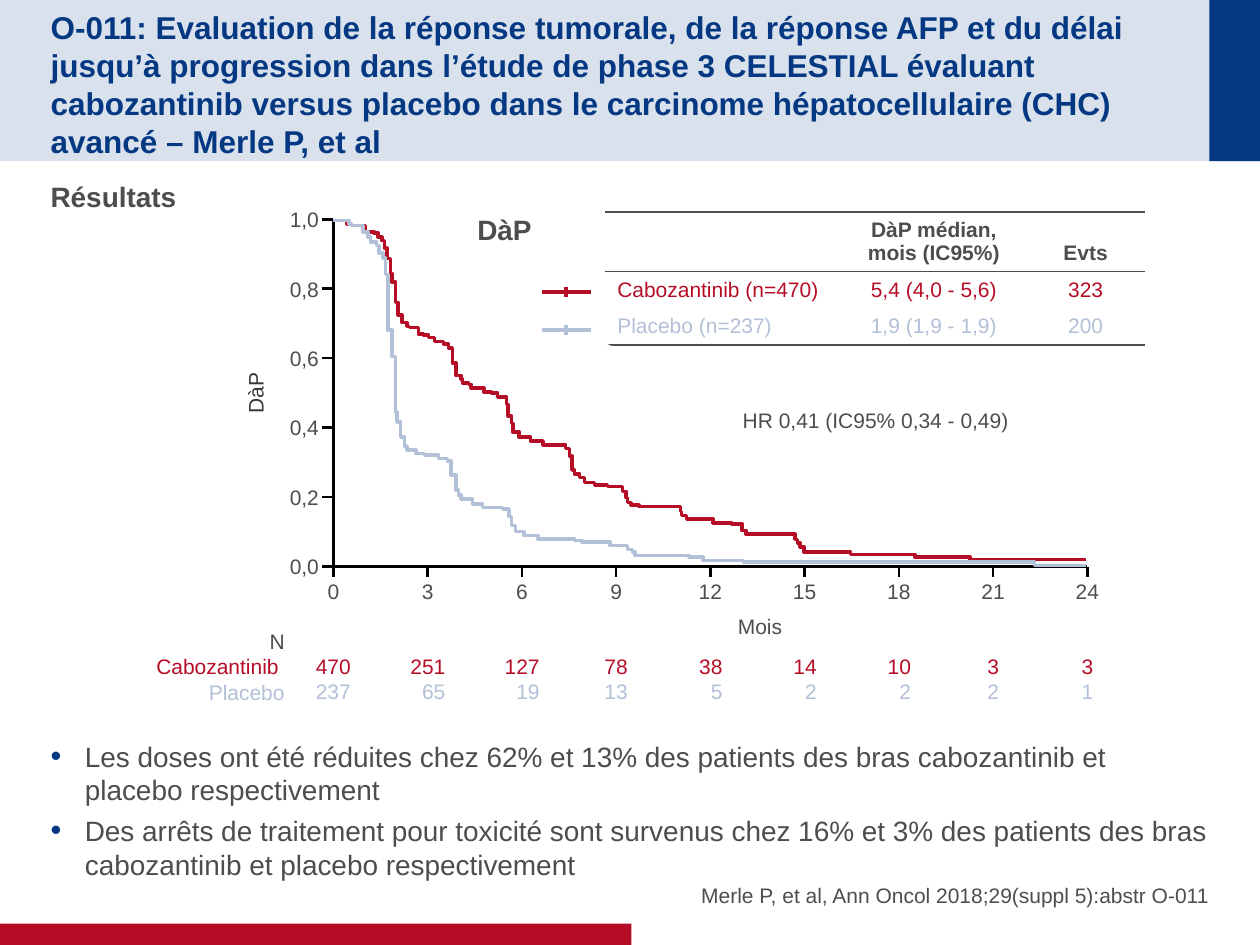
from lxml import etree
from pptx import Presentation
from pptx import util as u
from pptx.dml import color as dml
from pptx.enum import shapes, text
from pptx.oxml import ns

# ---- Content ----
COLORS = {"navy": "043882", "red": "B60D27", "blue": "B2C0D8", "grey": "4D4D4D",
          "axis_title": "363636", "black": "000000", "white": "FFFFFF"}
FONT = "Arial"
PLAIN_TABLE = "{2D5ABB26-0587-4C30-8999-92F81FD0307C}"
TITLE = ("O-011: Evaluation de la réponse tumorale, de la réponse AFP et du délai "
         "jusqu’à progression dans l’étude de phase 3 CELESTIAL évaluant cabozantinib "
         "versus placebo dans le carcinome hépatocellulaire (CHC) avancé – Merle P, et al")
HEADING = "Résultats"
FINDINGS = [
    "Les doses ont été réduites chez 62% et 13% des patients des bras cabozantinib "
    "et placebo respectivement",
    "Des arrêts de traitement pour toxicité sont survenus chez 16% et 3% des patients "
    "des bras cabozantinib et placebo respectivement",
]
CITATION = "Merle P, et al, Ann Oncol 2018;29(suppl 5):abstr O-011"
SUMMARY = [
    ("grey", ["", "DàP médian, mois (IC95%)", "Evts"]),
    ("red", ["Cabozantinib (n=470)", "5,4 (4,0 - 5,6)", "323"]),
    ("blue", ["Placebo (n=237)", "1,9 (1,9 - 1,9)", "200"]),
]
PROBABILITIES = ["1,0", "0,8", "0,6", "0,4", "0,2", "0,0"]
AT_RISK = [("0", "470", "237"), ("3", "251", "65"), ("6", "127", "19"),
           ("9", "78", "13"), ("12", "38", "5"), ("15", "14", "2"),
           ("18", "10", "2"), ("21", "3", "2"), ("24", "3", "1")]

# Step curves in hundredths of an inch: (x of the drop, new level)
CURVE_START, CURVE_END = (264, 175), 862
CABOZANTINIB = [
    (275, 178), (279, 179), (290, 184), (297, 185), (300, 188), (303, 191), (305, 197),
    (307, 205), (310, 217), (311, 224), (314, 240), (316, 250), (319, 256), (323, 259),
    (325, 260), (332, 265), (336, 266), (340, 268), (345, 271), (352, 273), (356, 276),
    (359, 288), (362, 298), (366, 301), (367, 304), (372, 305), (374, 308), (384, 311),
    (390, 312), (395, 315), (402, 321), (403, 330), (406, 336), (407, 343), (412, 347),
    (421, 350), (431, 353), (449, 356), (452, 362), (454, 373), (456, 376), (460, 379),
    (464, 383), (472, 385), (482, 386), (494, 390), (497, 395), (498, 399), (501, 401),
    (507, 402), (540, 406), (541, 409), (545, 412), (566, 415), (581, 416), (589, 421),
    (592, 424), (631, 428), (633, 431), (635, 434), (638, 438), (675, 440), (726, 442),
    (770, 444)]
PLACEBO = [
    (277, 178), (279, 179), (288, 184), (292, 188), (294, 192), (299, 195), (301, 201),
    (304, 205), (306, 218), (308, 262), (311, 283), (314, 327), (315, 335), (318, 347),
    (321, 354), (323, 357), (330, 360), (337, 361), (348, 364), (355, 366), (358, 377),
    (362, 389), (364, 393), (366, 396), (375, 400), (383, 403), (399, 404), (404, 410),
    (406, 417), (409, 422), (416, 425), (427, 428), (456, 429), (462, 430), (484, 433),
    (498, 436), (502, 438), (504, 441), (547, 442), (558, 445), (590, 446), (821, 449)]

# Plot geometry in centimetres
AXIS_X, AXIS_TOP, X_STEP, Y_STEP, TICK = 6.72, 4.42, 1.9, 1.4, 0.22
AXIS_Y = AXIS_TOP + Y_STEP * (len(PROBABILITIES) - 1)
AXIS_END = AXIS_X + X_STEP * (len(AT_RISK) - 1)
LEFT, CENTER, RIGHT = text.PP_ALIGN.LEFT, text.PP_ALIGN.CENTER, text.PP_ALIGN.RIGHT
MIDDLE, BOTTOM = text.MSO_ANCHOR.MIDDLE, text.MSO_ANCHOR.BOTTOM


# ---- Helpers ----
def rgb(name):
    return dml.RGBColor.from_string(COLORS[name])


def cms(*values):
    return [u.Cm(v) for v in values]


def style(paragraph, color="grey", size=12, bold=False, align=LEFT, before=0, after=0):
    paragraph.alignment = align
    paragraph.space_before, paragraph.space_after = u.Pt(before), u.Pt(after)
    for run in paragraph.runs:
        run.font.name, run.font.size, run.font.bold = FONT, u.Pt(size), bold
        run.font.color.rgb = rgb(color)


def label(box, lines, anchor=text.MSO_ANCHOR.TOP, rotation=0):
    """Text box from (text, style) lines."""
    shape = slide.shapes.add_textbox(*cms(*box))
    shape.rotation = rotation
    frame = shape.text_frame
    frame.word_wrap, frame.vertical_anchor = False, anchor
    frame.text = "\n".join(line for line, _ in lines)
    for paragraph, (_, look) in zip(frame.paragraphs, lines):
        style(paragraph, **look)


def line(x1, y1, x2, y2, color="black", width=1.5):
    connector = slide.shapes.add_connector(
        shapes.MSO_CONNECTOR.STRAIGHT, *cms(x1, y1, x2, y2))
    connector.line.color.rgb, connector.line.width = rgb(color), u.Pt(width)
    etree.SubElement(connector.element.spPr, ns.qn("a:effectLst"))


def polyline(points, scale, color, width, fill=None):
    """Open outline; points are whole numbers of scale units."""
    builder = slide.shapes.build_freeform(*points[0], scale=scale)
    builder.add_line_segments(points[1:], close=False)
    shape = builder.convert_to_shape()
    shape.shadow.inherit = False
    shape.line.color.rgb, shape.line.width = rgb(color), u.Pt(width)
    if fill:
        shape.fill.solid()
        shape.fill.fore_color.rgb = rgb(fill)
    else:
        shape.fill.background()


def place(holder, box, margins, anchor):
    holder.left, holder.top, holder.width, holder.height = cms(*box)
    frame = holder.text_frame
    frame.margin_left = frame.margin_right = 0
    frame.margin_top, frame.margin_bottom = cms(*margins)
    frame.word_wrap, frame.auto_size = True, text.MSO_AUTO_SIZE.NONE
    frame.vertical_anchor = anchor
    return frame


def bullet(paragraph, char=None):
    props = paragraph._p.get_or_add_pPr()
    indent = u.Cm(0.69) if char else 0
    props.set("marL", str(indent))
    props.set("indent", str(-indent))
    if not char:
        etree.SubElement(props, ns.qn("a:buNone"))
        return
    bullet_color = etree.SubElement(props, ns.qn("a:buClr"))
    etree.SubElement(bullet_color, ns.qn("a:srgbClr"), val=COLORS["navy"])
    etree.SubElement(props, ns.qn("a:buSzPct"), val="110000")
    etree.SubElement(props, ns.qn("a:buFont"), typeface=FONT)
    etree.SubElement(props, ns.qn("a:buChar"), char=char)


def border(cell, sides):
    for index, (side, color) in enumerate(sides):
        edge = etree.Element(ns.qn(f"a:{side}"), w=str(u.Pt(1)))
        solid = etree.SubElement(edge, ns.qn("a:solidFill"))
        etree.SubElement(solid, ns.qn("a:srgbClr"), val=COLORS[color])
        cell._tc.get_or_add_tcPr().insert(index, edge)


prs = Presentation()
prs.slide_width, prs.slide_height = cms(25.4, 19.05)
slide = prs.slides.add_slide(prs.slide_layouts[3])
title, body, citation = slide.placeholders

# ---- Background bands, behind the placeholders ----
for box, color, alpha in [((0, 0, 25.4, 3.25), "navy", 15),
                          ((24.38, 0, 1.02, 3.25), "navy", 100),
                          ((0, 18.62, 12.73, 0.43), "red", 100)]:
    band = slide.shapes.add_shape(shapes.MSO_SHAPE.RECTANGLE, *cms(*box))
    band.shadow.inherit = False
    band.fill.solid()
    band.fill.fore_color.rgb = rgb(color)
    band.line.fill.background()
    if alpha < 100:
        tint = band.element.spPr.find(".//" + ns.qn("a:srgbClr"))
        etree.SubElement(tint, ns.qn("a:alpha"), val=str(alpha * 1000))
    title.element.addprevious(band.element)

# ---- Title, findings and citation ----
frame = place(title, (1.02, 0.51, 22.89, 2.24), (0.13, 0), MIDDLE)
frame.text = TITLE
style(frame.paragraphs[0], "navy", 18, True)

frame = place(body, (1.02, 3.48, 23.37, 14.43), (0.13, 0.13), text.MSO_ANCHOR.TOP)
frame.text = "\n".join([HEADING] + FINDINGS)
for i, paragraph in enumerate(frame.paragraphs):
    style(paragraph, size=16, bold=i == 0, before=297 if i == 1 else 0, after=4)
    bullet(paragraph, "•" if i else None)

frame = place(citation, (12.9, 16.94, 11.48, 1.35), (0, 0), BOTTOM)
frame.text = CITATION
style(frame.paragraphs[0], align=RIGHT)
bullet(frame.paragraphs[0])

# ---- Summary table ----
table = slide.shapes.add_table(3, 3, *cms(12.19, 4.27, 10.9, 2.67)).table
table.first_row = table.horz_banding = False
table._tbl.tblPr.find(ns.qn("a:tableStyleId")).text = PLAIN_TABLE
for column, width in zip(table.columns, cms(4.78, 3.71, 2.41)):
    column.width = width
edges = ["grey", "grey", "white", "grey"]
for r, (color, values) in enumerate(SUMMARY):
    table.rows[r].height = u.Cm(0.74 if r else 1.19)
    for c, value in enumerate(values):
        cell = table.cell(r, c)
        cell.text = value
        cell.vertical_anchor = MIDDLE if r else BOTTOM
        cell.fill.background()
        border(cell, [("lnT", edges[r]), ("lnB", edges[r + 1])])
        style(cell.text_frame.paragraphs[0], color, bold=r == 0,
              align=CENTER if c else LEFT)

# ---- Axes, tick labels and patients at risk ----
corners = [(AXIS_X, AXIS_TOP), (AXIS_X, AXIS_Y), (AXIS_END, AXIS_Y)]
polyline([cms(*corner) for corner in corners], 1, "black", 1.5)
for i, value in enumerate(PROBABILITIES):
    y = AXIS_TOP + i * Y_STEP
    line(AXIS_X - TICK, y, AXIS_X, y)
    label((5.56, y - 0.38, 1.12, 0.76), [(value, {"align": RIGHT})], MIDDLE)
for i, (month, treated, control) in enumerate(AT_RISK):
    x = AXIS_X + i * X_STEP
    line(x, AXIS_Y, x, AXIS_Y + TICK)
    width = 1.22 if len(treated) == 3 else 0.99
    align = CENTER if len(treated) == len(control) else RIGHT
    label((x - width / 2, 11.53, width, 2.82),
          [(month, {"align": CENTER}),
           (treated, {"color": "red", "align": align, "before": 28.5}),
           (control, {"color": "blue", "align": align})])

# ---- Curves and legend ----
for steps, color, fill, y in [(CABOZANTINIB, "red", "white", 5.89),
                              (PLACEBO, "blue", None, 6.65)]:
    points = [CURVE_START]
    for x, level in steps:
        points += [(x, points[-1][1]), (x, level)]
    points.append((CURVE_END, points[-1][1]))
    polyline(points, u.Cm(2.54) / 100, color, 2, fill)
    line(10.92, y, 11.91, y, color, 2)
    line(11.41, y - 0.1, 11.41, y + 0.1, color, 2)

# ---- Plot captions ----
label((4.47, 7.54, 1.35, 0.76), [("DàP", {"color": "axis_title", "align": CENTER})],
      rotation=-90)
label((14.63, 8.1, 6.05, 0.76), [("HR 0,41 (IC95% 0,34 - 0,49)", {"align": CENTER})])
label((2.87, 12.55, 3.12, 1.8), [("N", {"align": RIGHT}),
                                 ("Cabozantinib ", {"color": "red", "align": RIGHT}),
                                 ("Placebo", {"color": "blue", "align": RIGHT})])
label((14.6, 12.24, 1.42, 0.76), [("Mois", {"align": RIGHT})])
label((9.37, 4.17, 1.6, 0.94), [("DàP", {"size": 16, "bold": True, "align": CENTER})])

prs.save("out.pptx")
